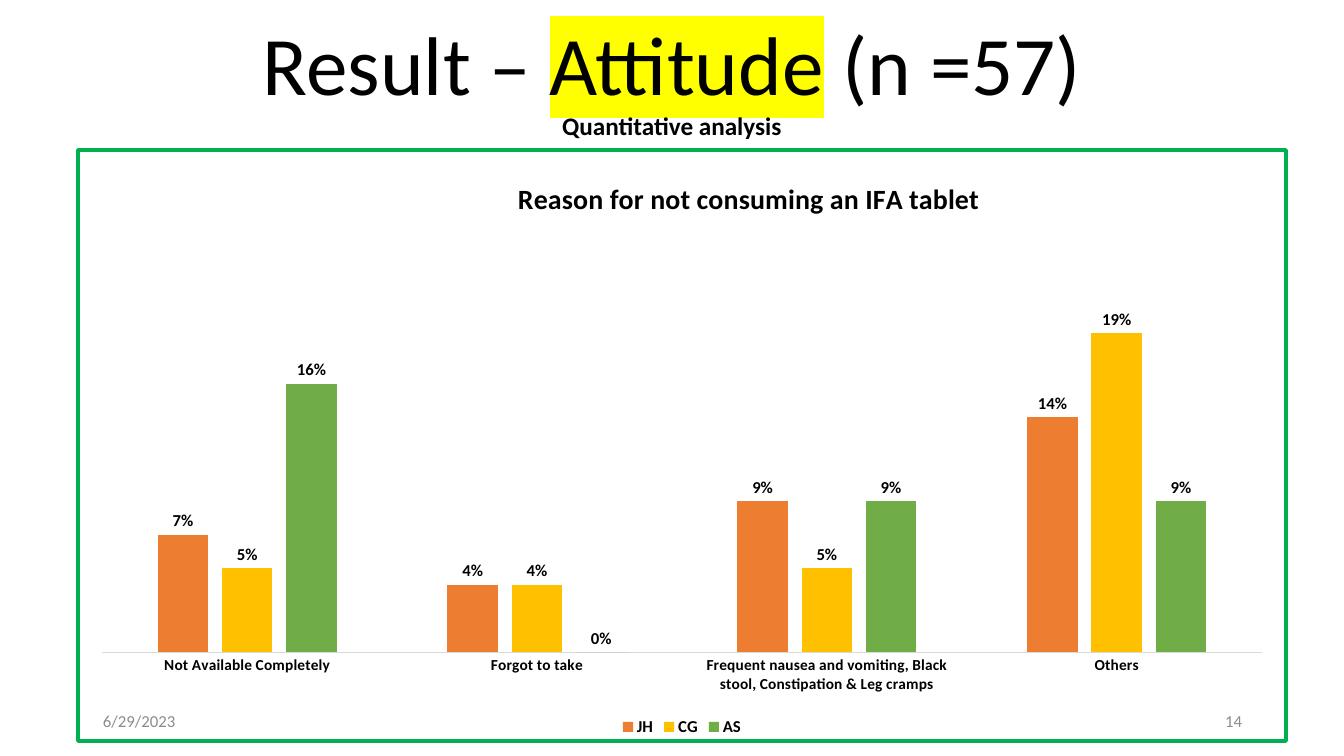
import pptx
import pptx.chart.data
import pptx.dml.color
import pptx.enum.chart
import pptx.enum.text
import pptx.oxml
import pptx.oxml.ns
import pptx.util

PX = 914400 / 100.8
FONT = "Calibri"
COLORS = {
    "text": "000000", "muted": "8C8C8C", "highlight": "FFFF00",
    "border": "00B050", "axis": "D9D9D9",
    "JH": "ED7D31", "CG": "FFC000", "AS": "70AD47",
}
REASONS = [
    "Not Available Completely",
    "Forgot to take",
    "Frequent nausea and vomiting, Black stool, Constipation & Leg cramps",
    "Others",
]
SHARES = {
    "JH": [0.07, 0.04, 0.09, 0.14],
    "CG": [0.05, 0.04, 0.05, 0.19],
    "AS": [0.16, 0, 0.09, 0.09],
}


def px(value):
    return pptx.util.Emu(round(value * PX))


def rgb(name):
    return pptx.dml.color.RGBColor.from_string(COLORS[name])


def set_values(target, values):
    for name, value in values.items():
        setattr(target, name, value)


def set_font(font, size, color="text", bold=False):
    set_values(font, {"name": FONT, "size": pptx.util.Pt(size), "bold": bold})
    font.color.rgb = rgb(color)


def place(shape, box):
    set_values(shape, dict(zip(("left", "top", "width", "height"), map(px, box))))


def chart_xml(body):
    return pptx.oxml.parse_xml(body.replace(">", " " + pptx.oxml.ns.nsdecls("c", "a") + ">", 1))


def set_layout(element, position, inner, **fractions):
    for old in element.findall(pptx.oxml.ns.qn("c:layout")):
        element.remove(old)
    target = '<c:layoutTarget val="inner"/>' if inner else ""
    modes = "".join(f'<c:{key}Mode val="edge"/>' for key in "xy")
    values = "".join(f'<c:{key} val="{value}"/>' for key, value in fractions.items())
    layout = f"<c:layout><c:manualLayout>{target}{modes}{values}</c:manualLayout></c:layout>"
    element.insert(position, chart_xml(layout))


def add_title(slide, box):
    title = slide.shapes.title
    place(title, box)
    frame = title.text_frame
    set_values(frame, {
        "word_wrap": True,
        "auto_size": pptx.enum.text.MSO_AUTO_SIZE.NONE,
        "vertical_anchor": pptx.enum.text.MSO_ANCHOR.MIDDLE,
    })
    paragraph = frame.paragraphs[0]
    set_values(paragraph, {"alignment": pptx.enum.text.PP_ALIGN.CENTER, "line_spacing": 0.9})
    for text in ("Result – ", "Attitude", " (n =57)"):
        run = paragraph.add_run()
        run.text = text
        set_font(run.font, 59.4)
        if text == "Attitude":
            highlight = chart_xml(
                f'<a:highlight><a:srgbClr val="{COLORS["highlight"]}"/></a:highlight>')
            run.font.fill._xPr.find(pptx.oxml.ns.qn("a:solidFill")).addnext(highlight)
    paragraph.add_line_break()
    subtitle = paragraph.add_run()
    subtitle.text = "Quantitative analysis"
    set_font(subtitle.font, 18, bold=True)


def add_reason_chart(slide, box):
    data = pptx.chart.data.CategoryChartData(number_format="0%")
    data.categories = REASONS
    for name, values in SHARES.items():
        data.add_series(name, values)
    kind = pptx.enum.chart.XL_CHART_TYPE.COLUMN_CLUSTERED
    chart = slide.shapes.add_chart(kind, *map(px, box), data).chart
    set_font(chart.font, 12, bold=True)
    format_chart_frame(chart)
    format_axes(chart)
    format_columns(chart.plots[0])


def format_chart_frame(chart):
    chart.has_title = True
    frame = chart.chart_title.text_frame
    frame.text = "Reason for not consuming an IFA tablet"
    set_font(frame.paragraphs[0].runs[0].font, 20, bold=True)
    set_layout(chart.chart_title._element, 1, False, x=0.36, y=0.04)
    chart.has_legend = True
    set_values(chart.legend, {
        "position": pptx.enum.chart.XL_LEGEND_POSITION.BOTTOM,
        "include_in_layout": False,
    })
    set_font(chart.legend.font, 12, bold=True)
    space = chart._chartSpace
    set_layout(space.chart.plotArea, 0, True, x=0.02, y=0.14, w=0.96, h=0.71)
    space.chart.addnext(chart_xml(
        f'<c:spPr><a:noFill/><a:ln w="{pptx.util.Pt(3)}"><a:solidFill>'
        f'<a:srgbClr val="{COLORS["border"]}"/></a:solidFill><a:round/></a:ln></c:spPr>'))


def format_axes(chart):
    set_values(chart.value_axis, {
        "visible": False, "has_major_gridlines": False,
        "minimum_scale": 0, "maximum_scale": 0.25,
    })
    axis = chart.category_axis
    no_tick = pptx.enum.chart.XL_TICK_MARK.NONE
    set_values(axis, {"major_tick_mark": no_tick, "minor_tick_mark": no_tick})
    set_font(axis.tick_labels.font, 11, bold=True)
    axis.format.line.width = pptx.util.Pt(0.75)
    axis.format.line.color.rgb = rgb("axis")


def format_columns(plot):
    set_values(plot, {"gap_width": 219, "overlap": -27, "vary_by_categories": False})
    for series in plot.series:
        series.format.fill.solid()
        series.format.fill.fore_color.rgb = rgb(series.name)
        labels = series.data_labels
        set_values(labels, {
            "show_value": True, "number_format": "0%", "number_format_is_linked": False,
            "position": pptx.enum.chart.XL_LABEL_POSITION.OUTSIDE_END,
        })
        set_font(labels.font, 12, bold=True)


def add_footer(slide, box):
    left, top, width, height = box
    note_width = 302
    notes = (
        ("6/29/2023", left, pptx.enum.text.PP_ALIGN.LEFT),
        ("14", left + width - note_width, pptx.enum.text.PP_ALIGN.RIGHT),
    )
    for text, note_left, alignment in notes:
        shape = slide.shapes.add_textbox(*map(px, (note_left, top, note_width, height)))
        frame = shape.text_frame
        set_values(frame, {
            "word_wrap": True, "text": text,
            "vertical_anchor": pptx.enum.text.MSO_ANCHOR.MIDDLE,
        })
        frame.paragraphs[0].alignment = alignment
        set_font(frame.paragraphs[0].runs[0].font, 12, "muted")


def main():
    presentation = pptx.Presentation()
    set_values(presentation, {"slide_width": px(1344), "slide_height": px(756)})
    slide = presentation.slides.add_slide(presentation.slide_layouts.get_by_name("Title Only"))
    add_reason_chart(slide, (76, 148, 1212, 595))
    add_footer(slide, (93, 701, 1159, 40))
    add_title(slide, (66, 13, 1212, 138))
    presentation.save("out.pptx")


if __name__ == "__main__":
    main()
